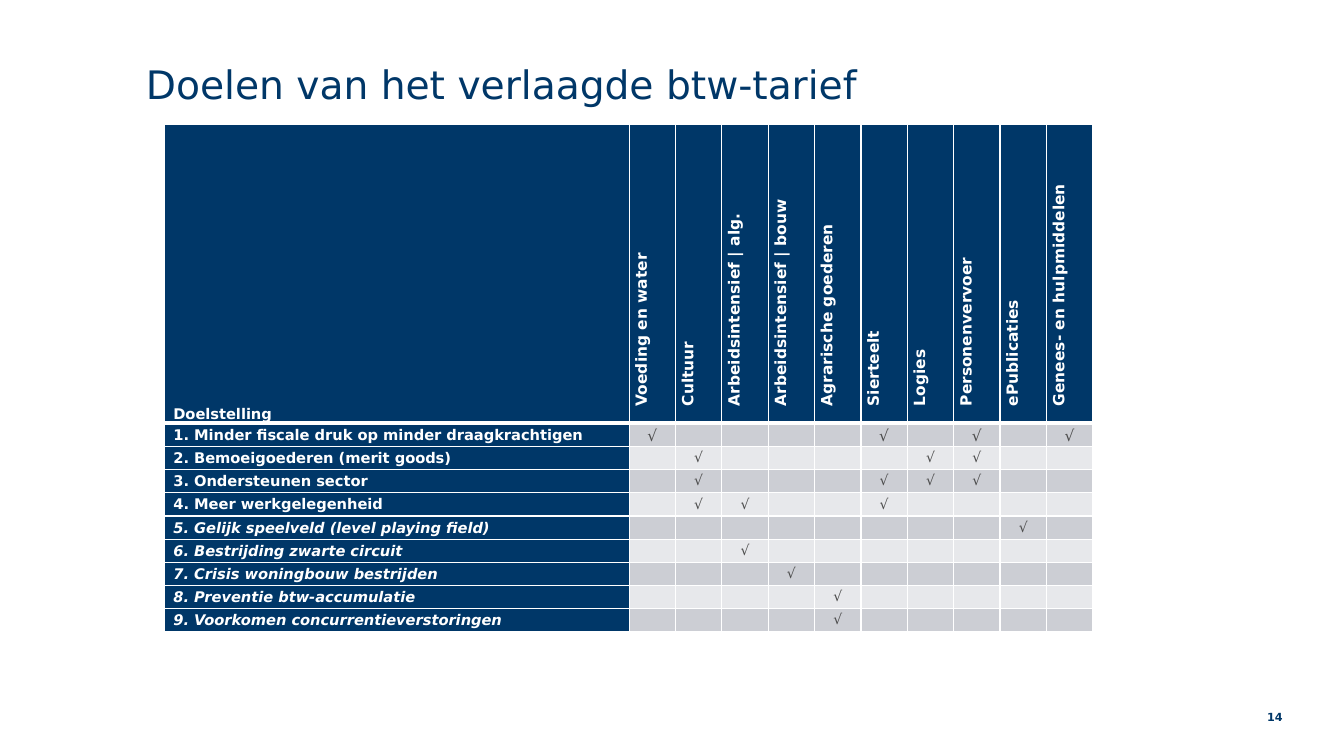
from dataclasses import dataclass

from lxml.etree import SubElement
from pptx import Presentation
from pptx.dml.color import RGBColor
from pptx.enum.text import MSO_ANCHOR, PP_ALIGN
from pptx.oxml import parse_xml
from pptx.oxml.ns import nsdecls, qn
from pptx.util import Inches, Pt

TITLE = "Doelen van het verlaagde btw-tarief"
PAGE = "14"
CORNER = "Doelstelling"
SECTORS = [
    "Voeding en water", "Cultuur", "Arbeidsintensief | alg.",
    "Arbeidsintensief | bouw", "Agrarische goederen", "Sierteelt",
    "Logies", "Personenvervoer", "ePublicaties", "Genees- en hulpmiddelen",
]
GOALS = [
    ("1. Minder fiscale druk op minder draagkrachtigen", {1, 6, 8, 10}),
    ("2. Bemoeigoederen (merit goods)", {2, 7, 8}),
    ("3. Ondersteunen sector", {2, 6, 7, 8}),
    ("4. Meer werkgelegenheid", {2, 3, 6}),
    ("5. Gelijk speelveld (level playing field)", {9}),
    ("6. Bestrijding zwarte circuit", {3}),
    ("7. Crisis woningbouw bestrijden", {4}),
    ("8. Preventie btw-accumulatie", {5}),
    ("9. Voorkomen concurrentieverstoringen", {5}),
]
FIRST_ITALIC_GOAL = 5
TICK = "√"


@dataclass(frozen=True)
class Theme:
    font: str = "DejaVu Sans"
    navy: str = "003768"
    white: str = "FFFFFF"
    ink: str = "4D4D4D"
    bands: tuple = ("E7E8EB", "CCCED4")
    title: float = 28
    page: float = 8
    goal: float = 10.5
    sector: float = 11
    first_tick: float = 11
    tick: float = 10
    rule: float = 1
    header_rule: float = 3


THEME = Theme()
WIDTH, HEIGHT = 13.33, 7.5
TABLE_LEFT, TABLE_TOP = 1.63, 1.23
GOAL_WIDTH, SECTOR_WIDTH = 4.61, 0.46
HEADER_HEIGHT, GOAL_HEIGHT = 2.97, 0.23
CELL_INSET, SECTOR_INDENT = 0.09, 0.08


def style(paragraph, size, color, bold=False, italic=False):
    paragraph.font.name = THEME.font
    paragraph.font.size = Pt(size)
    paragraph.font.bold = bold
    paragraph.font.italic = italic
    paragraph.font.color.rgb = RGBColor.from_string(color)


def add_label(slide, box, text, size, bold=False, align=PP_ALIGN.LEFT, anchor=MSO_ANCHOR.TOP):
    frame = slide.shapes.add_textbox(*map(Inches, box)).text_frame
    frame.word_wrap = True
    frame.vertical_anchor = anchor
    paragraph = frame.paragraphs[0]
    paragraph.text = text
    paragraph.alignment = align
    style(paragraph, size, THEME.navy, bold)


def add_borders(cell, top, bottom):
    widths = {"lnL": THEME.rule, "lnR": THEME.rule, "lnT": top, "lnB": bottom}
    for place, (side, width) in enumerate(widths.items()):
        cell._tc.get_or_add_tcPr().insert(place, parse_xml(
            f'<a:{side} {nsdecls("a")} w="{Pt(width)}"><a:solidFill>'
            f'<a:srgbClr val="{THEME.white}"/></a:solidFill></a:{side}>'))


def fill_cell(cell, row, text, fill, size, color, bold=False, italic=False, align=PP_ALIGN.LEFT):
    cell.fill.solid()
    cell.fill.fore_color.rgb = RGBColor.from_string(fill)
    cell.margin_left = cell.margin_right = Inches(CELL_INSET)
    cell.margin_top = cell.margin_bottom = 0
    add_borders(cell, THEME.header_rule if row == 1 else THEME.rule,
                THEME.header_rule if row == 0 else THEME.rule)
    paragraph = cell.text_frame.paragraphs[0]
    paragraph.alignment = align
    if text:
        paragraph.text = text
        paragraph.line_spacing = 1.2
        paragraph.space_after = Pt(2)
    else:
        SubElement(paragraph._p, qn("a:endParaRPr"), sz=str(int(size * 100)))
    style(paragraph, size, color, bold, italic)


def add_goal_table(slide):
    rows, columns = len(GOALS) + 1, len(SECTORS) + 1
    table = slide.shapes.add_table(
        rows, columns, Inches(TABLE_LEFT), Inches(TABLE_TOP),
        Inches(GOAL_WIDTH + SECTOR_WIDTH * len(SECTORS)),
        Inches(HEADER_HEIGHT + GOAL_HEIGHT * len(GOALS))).table
    for number, column in enumerate(table.columns):
        column.width = Inches(SECTOR_WIDTH if number else GOAL_WIDTH)
    for number, row in enumerate(table.rows):
        row.height = Inches(GOAL_HEIGHT if number else HEADER_HEIGHT)

    corner = table.cell(0, 0)
    fill_cell(corner, 0, CORNER, THEME.navy, THEME.goal, THEME.white, bold=True)
    corner.vertical_anchor = MSO_ANCHOR.BOTTOM
    for column, sector in enumerate(SECTORS, 1):
        header = table.cell(0, column)
        fill_cell(header, 0, sector, THEME.navy, THEME.sector, THEME.white, bold=True)
        header._tc.get_or_add_tcPr().set("vert", "vert270")
        properties = header.text_frame.paragraphs[0]._p.get_or_add_pPr()
        properties.set("marL", str(Inches(SECTOR_INDENT)))

    for row, (goal, ticked) in enumerate(GOALS, 1):
        fill_cell(table.cell(row, 0), row, goal, THEME.navy, THEME.goal, THEME.white,
                  bold=True, italic=row >= FIRST_ITALIC_GOAL)
        tick_size = THEME.first_tick if row == 1 else THEME.tick
        for column in range(1, columns):
            fill_cell(table.cell(row, column), row, TICK if column in ticked else "",
                      THEME.bands[row % 2], tick_size, THEME.ink, align=PP_ALIGN.CENTER)


def main():
    deck = Presentation()
    deck.slide_width, deck.slide_height = Inches(WIDTH), Inches(HEIGHT)
    slide = deck.slides.add_slide(deck.slide_layouts[6])
    add_label(slide, (1.35, 0.21, 11.4, 1.25), TITLE, THEME.title, anchor=MSO_ANCHOR.MIDDLE)
    add_goal_table(slide)
    add_label(slide, (12.14, 7, 0.68, 0.24), PAGE, THEME.page, bold=True, align=PP_ALIGN.RIGHT)
    deck.save("out.pptx")


if __name__ == "__main__":
    main()
